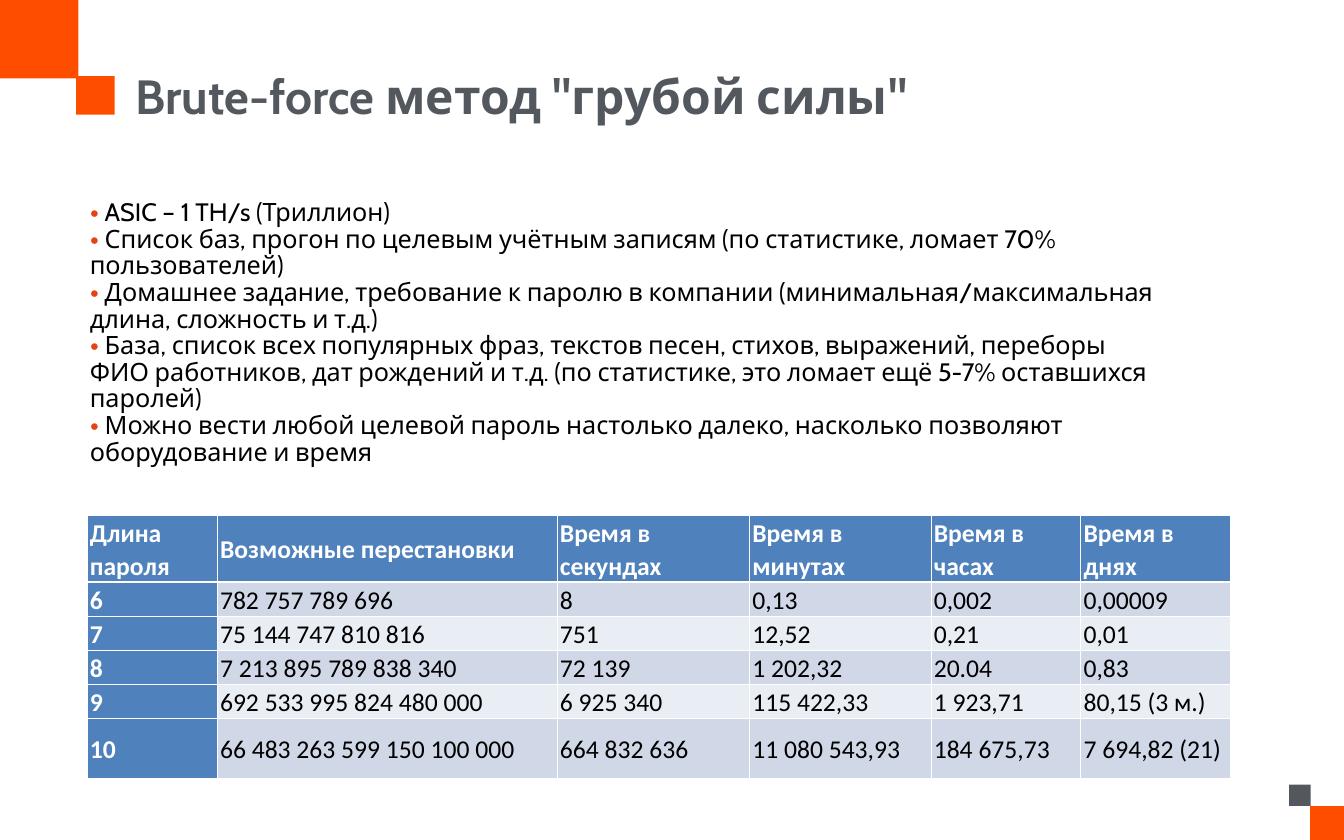
from dataclasses import dataclass

from lxml.etree import SubElement
from pptx import Presentation
from pptx.dml.color import RGBColor
from pptx.enum.shapes import MSO_SHAPE as Shape
from pptx.enum.text import MSO_ANCHOR as Anchor
from pptx.oxml.ns import qn
from pptx.util import Pt

ORANGE, GREY, WHITE, BLACK = "FF4D00", "53585F", "FFFFFF", "000000"
BLUE, BAND_DARK, BAND_LIGHT, BULLET = "4F81BD", "D0D8E8", "E9EDF4", "E64117"
INSET = 3.6


@dataclass
class Square:
    left: float
    top: float
    size: float
    color: str


@dataclass
class TextBlock:
    left: float
    top: float
    width: float
    height: float
    inset_top: float
    lines: list[str]
    font: dict
    spacing: float = 1.0
    bullet: str = ""


SQUARES = [
    Square(95.04, 95.04, 48.24, ORANGE),
    Square(1637.28, 1007.28, 42.48, ORANGE),
    Square(1611.36, 980.64, 26.64, GREY),
    Square(0, 0, 97.92, ORANGE),
]

TITLE = TextBlock(
    165.6, 82.8, 1406.88, 130.32, 0,
    ['Brute-force метод "грубой силы"'],
    dict(name="Cabin", size=Pt(60), bold=True, color=GREY),
)

NOTES = TextBlock(
    108.72, 246.96, 1341.36, 300.24, INSET,
    [
        " ASIC – 1 TH/s (Триллион)",
        " Список баз, прогон по целевым учётным записям (по статистике, ломает 70% пользователей)",
        " Домашнее задание, требование к паролю в компании (минимальная/максимальная длина, сложность и т.д.)",
        " База, список всех популярных фраз, текстов песен, стихов, выражений, переборы ФИО работников, "
        "дат рождений и т.д. (по статистике, это ломает ещё 5-7% оставшихся паролей)",
        " Можно вести любой целевой пароль настолько далеко, насколько позволяют оборудование и время",
    ],
    dict(name="Cabin", size=Pt(31.5), bold=False, color=BLACK),
    spacing=0.88,
    bullet="•",
)

COLUMNS = [162.72, 424.8, 240.48, 226.8, 187.2, 187.2]
ROW_HEIGHTS = [75.6, 38.88, 38.88, 38.88, 38.88, 75.6]
ROWS = [
    ["Длина пароля", "Возможные перестановки", "Время в секундах",
     "Время в минутах", "Время в часах", "Время в днях"],
    ["6", "782 757 789 696", "8", "0,13", "0,002", "0,00009"],
    ["7", "75 144 747 810 816", "751", "12,52", "0,21", "0,01"],
    ["8", "7 213 895 789 838 340", "72 139", "1 202,32", "20.04", "0,83"],
    ["9", "692 533 995 824 480 000", "6 925 340", "115 422,33", "1 923,71", "80,15 (3 м.)"],
    ["10", "66 483 263 599 150 100 000", "664 832 636", "11 080 543,93", "184 675,73", "7 694,82 (21)"],
]


def rgb(color: str) -> RGBColor:
    return RGBColor.from_string(color)


def write(p, text: str, font: dict, spacing: float) -> None:
    p.line_spacing = spacing
    r = p.add_run()
    r.text = text
    for key, value in font.items():
        if key == "color":
            r.font.color.rgb = rgb(value)
        else:
            setattr(r.font, key, value)


def add_bullet(p, char: str, font_name: str) -> None:
    pPr = p._p.get_or_add_pPr()
    pPr.set("marL", "0")
    pPr.set("indent", "0")
    clr = SubElement(pPr, qn("a:buClr"))
    SubElement(clr, qn("a:srgbClr"), val=BULLET)
    SubElement(pPr, qn("a:buSzPct"), val="120000")
    SubElement(pPr, qn("a:buFont"), typeface=font_name)
    SubElement(pPr, qn("a:buChar"), char=char)


def draw_square(s, square: Square) -> None:
    sp = s.shapes.add_shape(Shape.RECTANGLE, Pt(square.left), Pt(square.top),
                            Pt(square.size), Pt(square.size))
    sp.shadow.inherit = False
    sp.fill.solid()
    sp.fill.fore_color.rgb = rgb(square.color)
    sp.line.fill.background()


def draw_text(s, block: TextBlock) -> None:
    sp = s.shapes.add_textbox(Pt(block.left), Pt(block.top), Pt(block.width), Pt(block.height))
    tf = sp.text_frame
    frame = dict(word_wrap=True, vertical_anchor=Anchor.TOP, margin_left=Pt(INSET),
                 margin_right=Pt(INSET), margin_top=Pt(block.inset_top), margin_bottom=0)
    for key, value in frame.items():
        setattr(tf, key, value)
    for i, line in enumerate(block.lines):
        p = tf.add_paragraph() if i else tf.paragraphs[0]
        if block.bullet:
            add_bullet(p, block.bullet, block.font["name"])
        write(p, line, block.font, block.spacing)


def add_borders(cell, row: int) -> None:
    tcPr = cell._tc.get_or_add_tcPr()
    widths = dict(lnL=1, lnR=1, lnT=3 if row == 1 else 1, lnB=3 if row == 0 else 1)
    for side, width in widths.items():
        ln = SubElement(tcPr, qn(f"a:{side}"), w=str(Pt(width)))
        fill = SubElement(ln, qn("a:solidFill"))
        SubElement(fill, qn("a:srgbClr"), val=WHITE)


def draw_table(s) -> None:
    table = s.shapes.add_table(len(ROWS), len(COLUMNS), Pt(108.72), Pt(643.68),
                               Pt(sum(COLUMNS)), Pt(sum(ROW_HEIGHTS))).table
    for column, width in zip(table.columns, COLUMNS):
        column.width = Pt(width)
    for row, height in zip(table.rows, ROW_HEIGHTS):
        row.height = Pt(height)
    layout = dict(vertical_anchor=Anchor.MIDDLE, margin_left=Pt(INSET), margin_right=Pt(INSET),
                  margin_top=Pt(0.72), margin_bottom=Pt(0.72))
    for i, values in enumerate(ROWS):
        for j, value in enumerate(values):
            cell = table.cell(i, j)
            for key, setting in layout.items():
                setattr(cell, key, setting)
            heading = i == 0 or j == 0
            add_borders(cell, i)
            cell.fill.solid()
            cell.fill.fore_color.rgb = rgb(BLUE if heading else BAND_DARK if i % 2 else BAND_LIGHT)
            font = dict(name="Calibri", size=Pt(32), bold=heading, color=WHITE if heading else BLACK)
            write(cell.text_frame.paragraphs[0], value, font, 1.07)


def main() -> None:
    prs = Presentation()
    prs.slide_width, prs.slide_height = Pt(1679.76), Pt(1049.76)
    s = prs.slides.add_slide(prs.slide_layouts[6])
    for square in SQUARES:
        draw_square(s, square)
    draw_text(s, TITLE)
    draw_table(s)
    draw_text(s, NOTES)
    prs.save("out.pptx")


if __name__ == "__main__":
    main()
